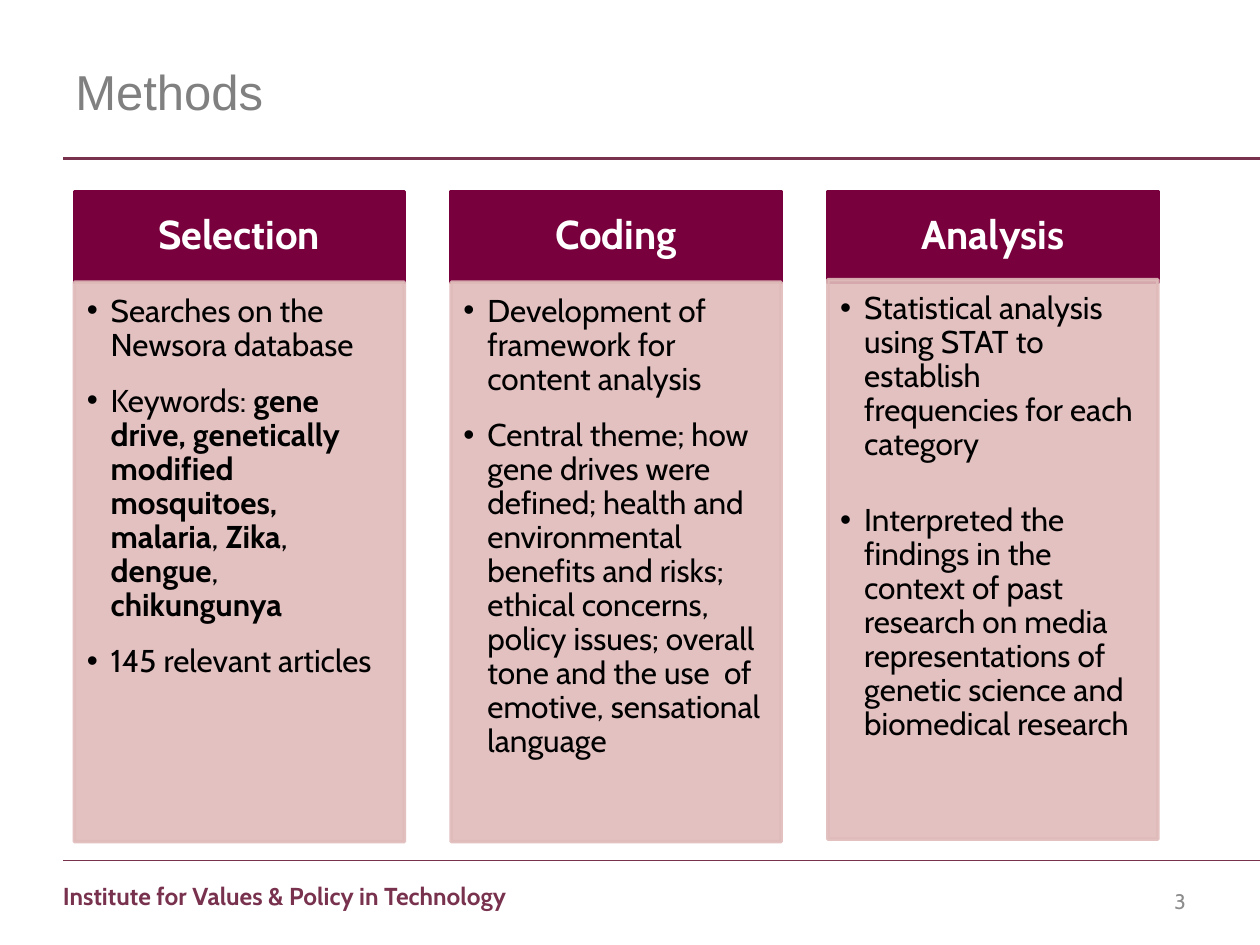
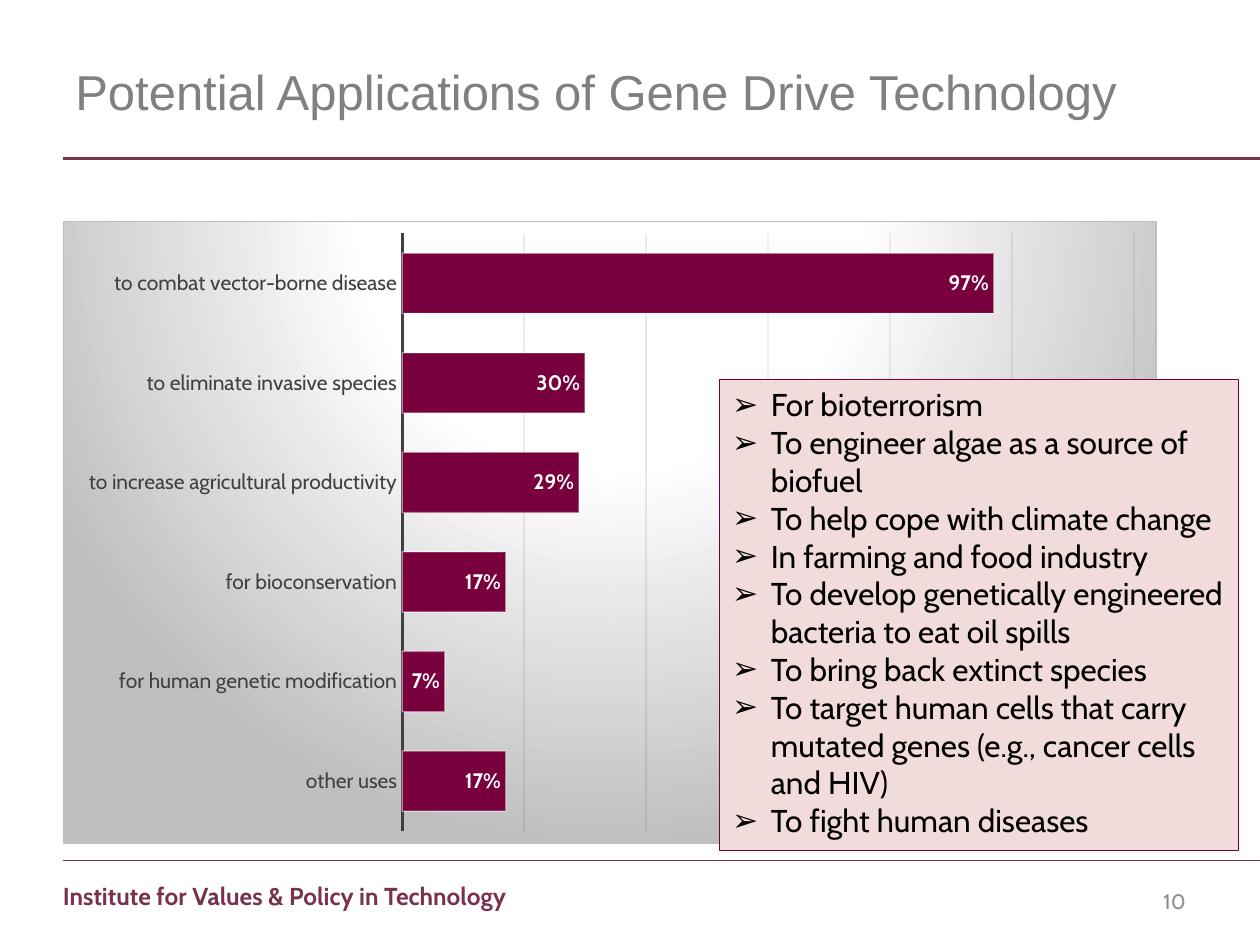
from lxml import etree
from pptx import Presentation
from pptx import util as u
from pptx.chart import data
from pptx.dml.color import RGBColor
from pptx.enum import chart as ch, shapes, text
from pptx.oxml import ns, parse_xml

COLORS = {
    "rule": "78324E", "maroon": "78003C", "rose": "DFBBBA", "blush": "F2DCDB",
    "title": "808080", "number": "8C8C8C", "axis": "404040", "grid": "0D0D0D",
    "border": "BFBFBF", "white": "FFFFFF", "black": "000000",
}
FONT, TITLE_FONT = "Cabin", "Arial"
FOOTER = "Institute for Values & Policy in Technology"

METHODS = {
    "title": "Methods", "number": 3,
    "columns": [
        ("Selection", 2.24, 12.6, [
            ["Searches on the Newsora database"],
            ["Keywords: ", "gene drive, genetically modified mosquitoes, malaria", ", ",
             "Zika", ", ", "dengue", ", ", "chikungunya"],
            ["145 relevant articles"],
        ]),
        ("Coding", 2.24, 12.6, [
            ["Development of framework for content analysis"],
            ["Central theme; how gene drives were defined; health and environmental "
             "benefits and risks; ethical concerns, policy issues; overall tone and "
             "the use  of emotive, sensational language"],
        ]),
        ("Analysis", 2.22, 24, [
            ["Statistical analysis using STAT to establish frequencies for each category"],
            ["Interpreted the findings in the context of past research on media "
             "representations of genetic science and biomedical research"],
        ]),
    ],
}
APPLICATIONS = {
    "title": "Potential Applications of Gene Drive Technology", "number": 10,
    "shares": [
        ("other uses", 0.17),
        ("for human genetic modification", 0.07),
        ("for bioconservation", 0.17),
        ("to increase agricultural productivity", 0.29),
        ("to eliminate invasive species", 0.3),
        ("to combat vector-borne disease", 0.97),
    ],
    "others": [
        ["For bioterrorism"],
        ["To engineer algae as a source of biofuel"],
        ["To help cope with climate change"],
        ["In farming and food industry"],
        ["To develop genetically engineered bacteria to eat oil spills"],
        ["To bring back extinct species"],
        ["To target human cells that carry mutated genes (e.g., cancer cells and HIV)"],
        ["To fight human diseases"],
    ],
}

COLUMN_LEFT, COLUMN_PITCH, COLUMN_WIDTH = 0.59, 2.99, 2.62
HEADER_TOP, HEADER_HEIGHT, BODY_HEIGHT = 1.52, 0.72, 4.44
PLOT_LAYOUT = {"x": 0.31, "y": 0.02, "w": 0.67, "h": 0.96}
GRADIENT_STOPS = [(0, "white"), (39, "white"), (100, "border")]
NS = {
    "a": "http://schemas.openxmlformats.org/drawingml/2006/main",
    "c": "http://schemas.openxmlformats.org/drawingml/2006/chart",
    "p": "http://schemas.openxmlformats.org/presentationml/2006/main",
}


def rgb(name):
    return RGBColor.from_string(COLORS[name])


def box(at):
    return [u.Inches(v) for v in at]


def set_font(font, size, color, bold=None, name=FONT):
    font.name, font.size, font.bold = name, u.Pt(size), bold
    font.color.rgb = rgb(color)


def set_line(line, color, width):
    line.color.rgb = rgb(color)
    line.width = u.Pt(width)


def set_alpha(element, path, percent):
    for clr in element.findall(path + "//a:srgbClr", NS):
        etree.SubElement(clr, ns.qn("a:alpha")).set("val", str(percent * 1000))


def set_frame(tf, insets=(0.1, 0.05, 0.1, 0.05), anchor="TOP"):
    tf.word_wrap = True
    tf.margin_left, tf.margin_top, tf.margin_right, tf.margin_bottom = box(insets)
    tf.vertical_anchor = getattr(text.MSO_ANCHOR, anchor)


def add_label(slide, at, words, size, color, bold=None, name=FONT, align="LEFT", **frame):
    tf = slide.shapes.add_textbox(*box(at)).text_frame
    set_frame(tf, **frame)
    p = tf.paragraphs[0]
    p.text, p.alignment = words, getattr(text.PP_ALIGN, align)
    set_font(p.font, size, color, bold, name)


def add_rect(slide, at, fill, line, width):
    sp = slide.shapes.add_shape(shapes.MSO_SHAPE.RECTANGLE, *box(at))
    sp.shadow.inherit = False
    sp.fill.solid()
    sp.fill.fore_color.rgb = rgb(fill)
    set_line(sp.line, line, width)
    return sp


def add_rule(slide, top, width):
    line = slide.shapes.add_connector(
        shapes.MSO_CONNECTOR.STRAIGHT, *box((0.5, top, 10, top)))
    set_line(line.line, "rule", width)
    etree.SubElement(line.element.spPr, ns.qn("a:effectLst"))


def add_bullets(tf, items, char, indent, gap=0, spacing=None):
    for i, runs in enumerate(items):
        p = tf.paragraphs[0] if i == 0 else tf.add_paragraph()
        p.alignment = text.PP_ALIGN.LEFT
        p.space_after = u.Pt(gap)
        p.line_spacing = spacing
        set_font(p.font, 18, "black")
        pPr = p._p.get_or_add_pPr()
        pPr.set("marL", str(u.Inches(indent)))
        pPr.set("indent", str(-u.Inches(indent)))
        bullet = etree.Element(ns.qn("a:buChar"), char=char)
        pPr.find("a:defRPr", NS).addprevious(bullet)
        bullet.addprevious(etree.Element(ns.qn("a:buFont"), typeface="Arial"))
        for k, words in enumerate(runs):
            r = p.add_run()
            r.text = words
            if len(runs) > 1:
                r.font.bold = k % 2 == 1


def add_page(prs, content):
    slide = prs.slides.add_slide(prs.slide_layouts[6])
    add_rule(slide, 6.83, 1)
    add_rule(slide, 1.26, 1.75)
    add_label(slide, (0.46, 6.95, 5.3, 0.51), FOOTER, 14, "rule", bold=True,
              insets=[0.04] * 4)
    add_label(slide, (0.5, 0.44, 9, 1.25), content["title"], 28, "title", name=TITLE_FONT)
    add_label(slide, (9.1, 6.95, 0.41, 0.4), str(content["number"]), 12, "number",
              align="RIGHT", anchor="MIDDLE")
    return slide


def add_column(slide, left, heading, body_top, gap, items):
    header = add_rect(slide, (left, HEADER_TOP, COLUMN_WIDTH, HEADER_HEIGHT),
                      "maroon", "maroon", 2)
    set_frame(header.text_frame, (0.18, 0.1, 0.18, 0.1), "MIDDLE")
    p = header.text_frame.paragraphs[0]
    p.text, p.alignment, p.line_spacing = heading, text.PP_ALIGN.CENTER, 0.9
    set_font(p.font, 23, "white", True)

    body = add_rect(slide, (left, body_top, COLUMN_WIDTH, BODY_HEIGHT), "rose", "rose", 2)
    set_alpha(body.element, "p:spPr", 90)
    set_frame(body.text_frame, (0.1, 0.1, 0.14, 0.16))
    add_bullets(body.text_frame, items, "•", 0.19, gap, 0.9)


def style_chart_area(chart):
    stops = "".join(
        f'<a:gs pos="{pos * 1000}"><a:srgbClr val="{COLORS[color]}"/></a:gs>'
        for pos, color in GRADIENT_STOPS)
    area = parse_xml(
        f'<c:spPr {ns.nsdecls("c", "a")}><a:gradFill><a:gsLst>{stops}</a:gsLst>'
        '<a:path path="circle"><a:fillToRect l="50000" t="-80000" r="50000" b="180000"/>'
        f'</a:path></a:gradFill><a:ln w="{u.Pt(0.75)}"><a:solidFill>'
        f'<a:srgbClr val="{COLORS["border"]}"/></a:solidFill></a:ln></c:spPr>')
    chart.element.find("c:txPr", NS).addprevious(area)

    plot_area = chart.element.find(".//c:plotArea", NS)
    for old in plot_area.findall("c:layout", NS):
        plot_area.remove(old)
    modes = '<c:xMode val="edge"/><c:yMode val="edge"/>'
    sizes = "".join(f'<c:{k} val="{v}"/>' for k, v in PLOT_LAYOUT.items())
    plot_area.insert(0, parse_xml(
        f'<c:layout {ns.nsdecls("c")}><c:manualLayout><c:layoutTarget val="inner"/>'
        f'{modes}{sizes}</c:manualLayout></c:layout>'))


def add_shares_chart(slide, shares):
    cd = data.CategoryChartData(number_format="0%")
    cd.categories = [name for name, _ in shares]
    cd.add_series("Series 1", [share for _, share in shares])
    chart = slide.shapes.add_chart(
        ch.XL_CHART_TYPE.BAR_CLUSTERED, *box((0.5, 1.75, 8.68, 4.95)), cd).chart
    chart.has_legend = chart.has_title = False
    set_font(chart.font, 10, "black")

    cat = chart.category_axis
    cat.major_tick_mark = cat.minor_tick_mark = ch.XL_TICK_MARK.NONE
    cat.has_major_gridlines = False
    set_font(cat.tick_labels.font, 12, "axis")
    set_line(cat.format.line, "axis", 1.5)

    val = chart.value_axis
    val.minimum_scale, val.maximum_scale, val.major_unit = 0, 1.2, 0.2
    val.has_major_gridlines = True
    set_line(val.major_gridlines.format.line, "grid", 0.75)
    val.visible = False

    plot = chart.plots[0]
    plot.gap_width, plot.vary_by_categories = 65, False
    bars = plot.series[0].format
    bars.fill.solid()
    bars.fill.fore_color.rgb = rgb("maroon")
    set_line(bars.line, "white", 0.75)
    plot.has_data_labels = True
    labels = plot.data_labels
    labels.show_value = True
    labels.position = ch.XL_LABEL_POSITION.INSIDE_END
    labels.number_format, labels.number_format_is_linked = "0%", False
    set_font(labels.font, 12, "white", True)

    set_alpha(chart.element, ".//c:majorGridlines", 10)
    set_alpha(chart.element, ".//c:ser/c:spPr/a:ln", 50)
    style_chart_area(chart)


def main():
    prs = Presentation()
    prs.slide_width, prs.slide_height = box((10, 7.5))

    slide = add_page(prs, METHODS)
    for i, column in enumerate(METHODS["columns"]):
        add_column(slide, COLUMN_LEFT + i * COLUMN_PITCH, *column)

    slide = add_page(prs, APPLICATIONS)
    add_shares_chart(slide, APPLICATIONS["shares"])
    others = add_rect(slide, (5.71, 3.01, 4.12, 3.74), "blush", "maroon", 0.75)
    set_frame(others.text_frame)
    add_bullets(others.text_frame, APPLICATIONS["others"], "➢", 0.31)

    prs.save("out.pptx")


if __name__ == "__main__":
    main()
